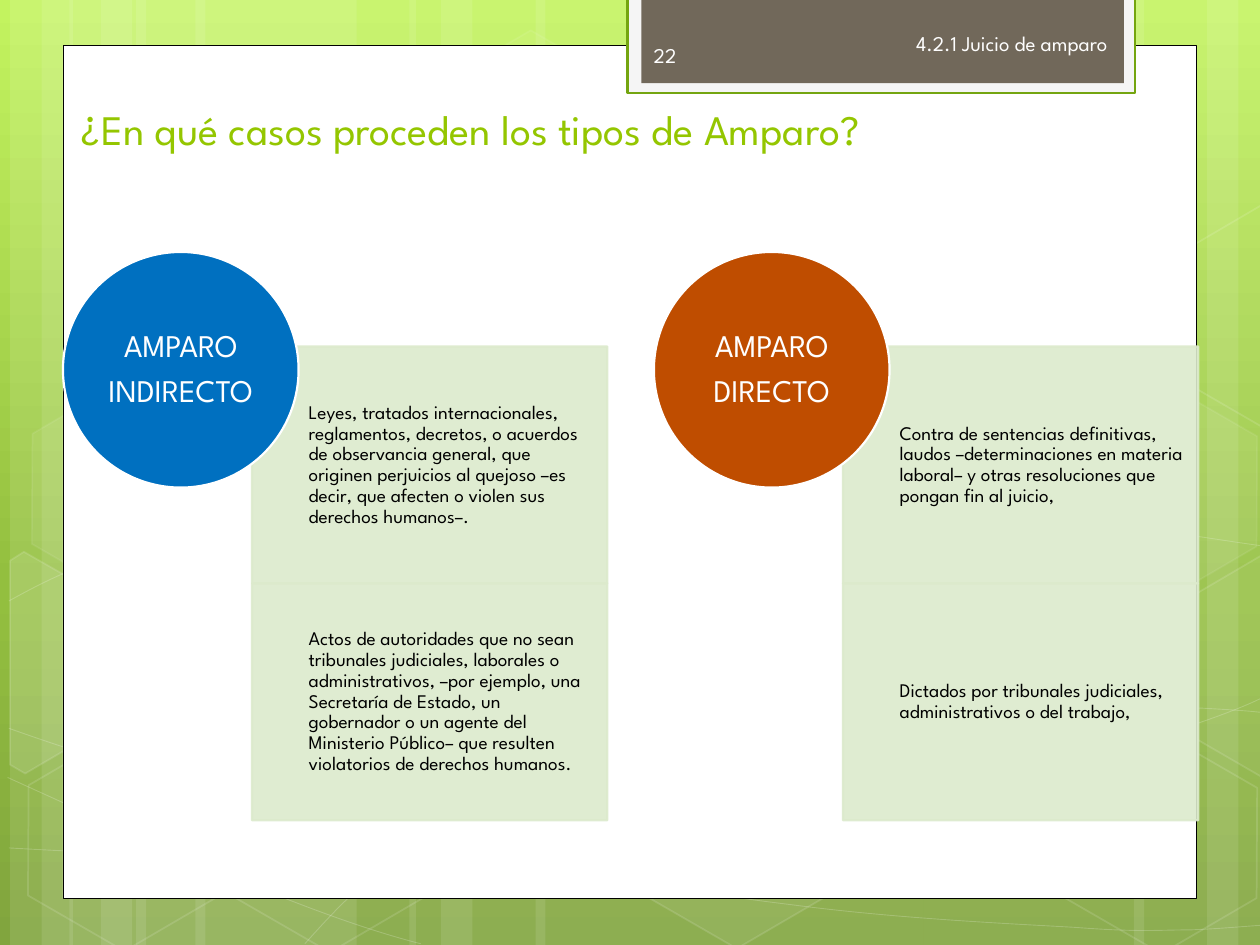
import copy

import pptx
import pptx.dml.color
import pptx.enum.shapes
import pptx.enum.text
import pptx.oxml
import pptx.oxml.ns
import pptx.util
from lxml import etree

RGBColor = pptx.dml.color.RGBColor
SHAPE = pptx.enum.shapes.MSO_SHAPE
ALIGN = pptx.enum.text.PP_ALIGN
ANCHOR = pptx.enum.text.MSO_ANCHOR
qn = pptx.oxml.ns.qn

PX = 9144
FONT = "League Spartan"
WHITE = RGBColor(0xFF, 0xFF, 0xFF)
BLACK = RGBColor(0, 0, 0)
NEAR_WHITE = RGBColor(0xFE, 0xFE, 0xFE)
TAB_EDGE = RGBColor(0xF5, 0xF5, 0xF5)
TAB_LINE = RGBColor(0x74, 0xA5, 0x10)
TAB_FILL = RGBColor(0x71, 0x68, 0x5A)
TITLE_GREEN = RGBColor(0x94, 0xC6, 0x00)
PALE_GREEN = RGBColor(0xDC, 0xEA, 0xCC)
BLUE = RGBColor(0x00, 0x70, 0xC0)
ORANGE = RGBColor(0xBF, 0x4D, 0x00)
BACKGROUND = [
    (0, RGBColor(0xC3, 0xF3, 0x5F)),
    (0.62, RGBColor(0x93, 0xBF, 0x3F)),
    (1, RGBColor(0x81, 0xA5, 0x3E)),
]

STRIPES = [
    (108, 175), (8, 50), (33, 83), (155, 175), (55, 50), (80, 83),
    (733, 175), (958, 50), (900, 83), (425, 308), (325, 50), (350, 83),
]
CURVES = [
    ([(7, 673), (61, 676), (115, 679), (190, 678), (265, 677), (358, 675), (458, 665),
      (558, 655), (700, 636), (792, 617), (883, 598), (977, 568), (1007, 551)], None),
    ([(7, 477), (36, 461), (65, 446), (121, 431), (178, 416), (259, 394), (347, 387),
      (436, 380), (544, 379), (654, 387), (764, 395), (947, 426), (1007, 434)], None),
    ([(6, 617), (127, 672), (247, 727), (334, 749)], None),
    ([(7, 578), (38, 589), (70, 600), (128, 616), (186, 631), (273, 656), (357, 673),
      (440, 690), (545, 708), (628, 718), (711, 729), (800, 733), (853, 736),
      (905, 740), (919, 738), (945, 738), (971, 737), (989, 735), (1007, 734)], None),
    ([(242, 749), (260, 729), (278, 709), (302, 691), (326, 673), (360, 653), (388, 639),
      (416, 625), (433, 619), (470, 609), (506, 599), (573, 585), (608, 578),
      (644, 571), (649, 571), (680, 569), (711, 566), (760, 563), (794, 562),
      (829, 561), (886, 562), (886, 562), (953, 562),
      (971, 563), (988, 564), (997, 565), (1006, 566), (1003, 565), (1006, 566)], 21),
]
HEXAGONS = [
    (334, 36, 4, 8), (497, 589, 6, 12), (11, 591, None, 12), (14, 312, 7, 8),
    (174, 592, None, 12), (753, 453, 10, 12), (834, 593, None, 12), (834, 314, 7, 8),
]
CUT_HEXAGONS = [
    ([(8, 445), (19, 438), (96, 482), (95, 570), (20, 614), (8, 607)], 10),
    ([(926, 485), (1001, 441), (1009, 446), (1009, 613), (1002, 617), (926, 573)], 4),
    ([(926, 207), (1001, 163), (1010, 168), (1009, 335), (1002, 339), (926, 295)], None),
]
COLUMNS = [
    (50, BLUE, ["AMPARO", "INDIRECTO"], [
        "Leyes, tratados internacionales, reglamentos, decretos, o acuerdos de observancia "
        "general, que originen perjuicios al quejoso –es decir, que afecten o violen sus "
        "derechos humanos–.",
        "Actos de autoridades que no sean tribunales judiciales, laborales o administrativos, "
        "–por ejemplo, una Secretaría de Estado, un gobernador o un agente del Ministerio "
        "Público– que resulten violatorios de derechos humanos.",
    ]),
    (519, ORANGE, ["AMPARO", "DIRECTO"], [
        "Contra de sentencias definitivas, laudos –determinaciones en materia laboral– y otras "
        "resoluciones que pongan fin al juicio,",
        "Dictados por tribunales judiciales, administrativos o del trabajo,",
    ]),
]


def set_alpha(parent, percent):
    for color in parent.iter(qn("a:srgbClr")):
        etree.SubElement(color, qn("a:alpha"), val=str(percent * 1000))


def paint(shape, fill=None, fill_alpha=100, line=None, width=1, line_alpha=100):
    shape.shadow.inherit = False
    properties = shape.element.spPr
    if fill is None:
        shape.fill.background()
    else:
        shape.fill.solid()
        shape.fill.fore_color.rgb = fill
        if fill_alpha < 100:
            set_alpha(properties.find(qn("a:solidFill")), fill_alpha)
    if line is None:
        shape.line.fill.background()
    else:
        shape.line.color.rgb = line
        shape.line.width = pptx.util.Pt(width)
        if line_alpha < 100:
            set_alpha(properties.find(qn("a:ln")), line_alpha)


def add_preset(slide, kind, box, **style):
    shape = slide.shapes.add_shape(kind, *(value * PX for value in box))
    paint(shape, **style)
    return shape


def add_outline(slide, points, close, **style):
    points = [(x * PX, y * PX) for x, y in points]
    builder = slide.shapes.build_freeform(*points[0])
    builder.add_line_segments(points[1:], close=close)
    shape = builder.convert_to_shape()
    paint(shape, **style)
    return shape


def add_curve(slide, knots, straight, **style):
    shape = add_outline(slide, knots, False, **style)
    segments = list(shape.element.iter(qn("a:lnTo")))
    if straight is not None:
        del segments[straight]
    for start in range(0, len(segments), 3):
        first, second, end = segments[start:start + 3]
        first.tag = qn("a:cubicBezTo")
        for segment in (second, end):
            first.append(segment[0])
            segment.getparent().remove(segment)


def write_text(shape, lines, size, color, align=ALIGN.LEFT, anchor=ANCHOR.MIDDLE,
               insets=(10, 5, 10, 5), compact=False):
    frame = shape.text_frame
    frame.word_wrap = True
    frame.auto_size = pptx.enum.text.MSO_AUTO_SIZE.NONE
    frame.vertical_anchor = anchor
    (frame.margin_left, frame.margin_top,
     frame.margin_right, frame.margin_bottom) = (value * PX for value in insets)
    for index, line in enumerate(lines):
        paragraph = frame.add_paragraph() if index else frame.paragraphs[0]
        paragraph.alignment = align
        if compact:
            paragraph.line_spacing = 0.9
            paragraph.space_after = pptx.util.Pt(round(size * 0.35, 1))
        run = paragraph.add_run()
        run.text = line
        run.font.name = FONT
        run.font.size = pptx.util.Pt(size)
        run.font.color.rgb = color


def add_label(slide, box, text, **style):
    shape = slide.shapes.add_textbox(*(value * PX for value in box))
    write_text(shape, [text], 12, NEAR_WHITE, **style)


def fill_background(slide):
    fill = slide.background.fill
    fill.gradient()
    fill.gradient_angle = 270
    stop_list = next(slide.element.iter(qn("a:gsLst")))
    stop_list.append(copy.deepcopy(stop_list[-1]))
    for stop, (position, color) in zip(fill.gradient_stops, BACKGROUND):
        stop.position = position
        stop.color.rgb = color


def add_decoration(slide):
    for left, width in STRIPES:
        add_preset(slide, SHAPE.RECTANGLE, (left, 0, width, 750), fill=WHITE, fill_alpha=10)
    for knots, straight in CURVES:
        add_curve(slide, knots, straight, line=WHITE, width=0.5, line_alpha=20)
    for left, top, alpha, line_alpha in HEXAGONS:
        hexagon = add_preset(slide, SHAPE.HEXAGON, (left, top, 175, 152),
                             fill=WHITE if alpha else None, fill_alpha=alpha or 100,
                             line=WHITE, line_alpha=line_alpha)
        hexagon.adjustments[0] = 0.285
        hexagon.rotation = 30
    for points, alpha in CUT_HEXAGONS:
        add_outline(slide, points, True, fill=WHITE if alpha else None,
                    fill_alpha=alpha or 100, line=WHITE, line_alpha=12)


def add_title(slide, text):
    title = slide.shapes.title
    slide.shapes.element.append(title.element)
    title.left, title.top, title.width, title.height = (
        value * PX for value in (55, 91, 894, 36))
    write_text(title, [text], 24, TITLE_GREEN, anchor=ANCHOR.BOTTOM)


def add_column(slide, left, color, heading, cases):
    for index, case in enumerate(cases):
        panel = add_preset(slide, SHAPE.RECTANGLE, (left + 150, 275 + 188 * index, 282, 188),
                           fill=PALE_GREEN, fill_alpha=90,
                           line=PALE_GREEN, width=1.25, line_alpha=90)
        write_text(panel, [case], 11, BLACK, insets=(45, 9, 9, 9), compact=True)
    circle = add_preset(slide, SHAPE.OVAL, (left, 200, 187, 187),
                        fill=color, line=WHITE, width=1.25)
    write_text(circle, heading, 18, WHITE, ALIGN.CENTER, insets=(0, 0, 0, 0), compact=True)


def main():
    presentation = pptx.Presentation()
    presentation.slide_width = 1000 * PX
    presentation.slide_height = 750 * PX
    slide = presentation.slides.add_slide(presentation.slide_layouts[5])
    fill_background(slide)
    add_decoration(slide)
    add_preset(slide, SHAPE.RECTANGLE, (50, 36, 900, 677), fill=WHITE, line=BLACK, width=0.5)
    add_preset(slide, SHAPE.RECTANGLE, (498, -2, 403, 76),
               fill=TAB_EDGE, line=TAB_LINE, width=1.25)
    add_preset(slide, SHAPE.RECTANGLE, (509, -2, 383, 68), fill=TAB_FILL)
    add_title(slide, "¿En qué casos proceden los tipos de Amparo?")
    add_label(slide, (656, 24, 233, 40), "4.2.1 Juicio de amparo",
              align=ALIGN.RIGHT, insets=(10, 5, 10, 24))
    add_label(slide, (509, 24, 146, 40), "22")
    for column in COLUMNS:
        add_column(slide, *column)
    presentation.save("out.pptx")


if __name__ == "__main__":
    main()
